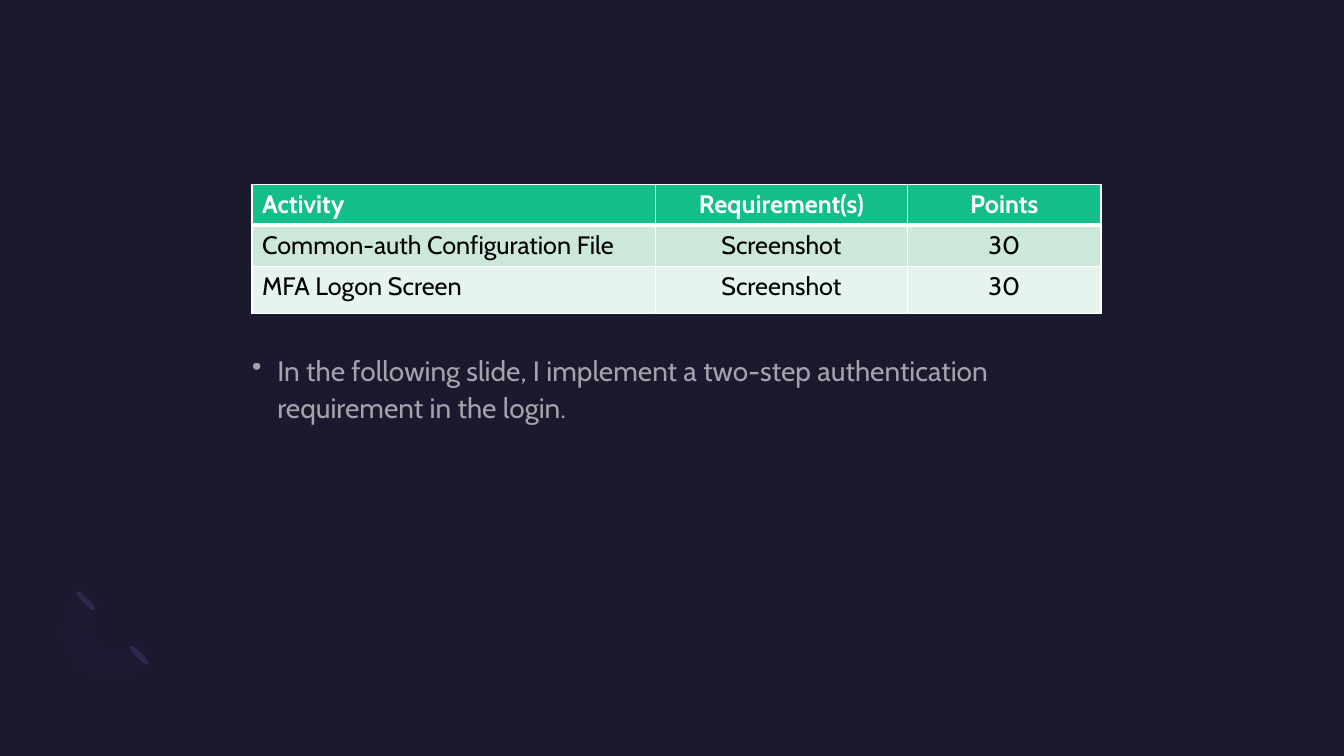
import pptx
import pptx.util
import pptx.dml.color
import pptx.enum.shapes
import pptx.enum.text
import pptx.oxml
import pptx.oxml.ns
from lxml import etree
from pptx.util import Inches

THEME = {
    "font": "Cabin", "table_size": 18, "body_size": 20,
    "background": "1B192E", "light": "FFFFFF", "dark": "000000",
    "header": "13BE89", "bands": ["CCE8DA", "E7F4ED"],
    "ellipse": "2C284A", "arc": "7771B2",
}
ROWS = [
    ("Activity", "Requirement(s)", "Points"),
    ("Common-auth Configuration File", "Screenshot", "30"),
    ("MFA Logon Screen", "Screenshot", "30"),
]
COLUMN_WIDTHS = [4, 2.5, 1.92]
ROW_HEIGHTS = [0.4, 0.4, 0.47]
LEFT, TABLE_TOP, BODY_TOP, BODY_HEIGHT = 2.5, 1.83, 3.47, 2.81
BODY = ("In the following slide, I implement a two-step authentication "
        "requirement in the login.")
ELLIPSES = [(1.35, 6.37), (0.82, 5.83)]
# Cubic curves of the ring: start, two control points, end
ARC_CURVES = [
    [(0.76, 6.59), (0.56, 6.39), (0.58, 6.05), (0.81, 5.82)],
    [(0.99, 6), (0.87, 6.11), (0.86, 6.29), (0.96, 6.38)],
    [(0.96, 6.38), (1.06, 6.48), (1.23, 6.47), (1.35, 6.36)],
    [(1.52, 6.54), (1.3, 6.76), (0.95, 6.79), (0.76, 6.59)],
]


def rgb(name):
    return pptx.dml.color.RGBColor.from_string(THEME.get(name, name))


def set_alpha(element, percent):
    color = element.find(".//" + pptx.oxml.ns.qn("a:srgbClr"))
    etree.SubElement(color, pptx.oxml.ns.qn("a:alpha")).set("val", str(percent * 1000))


def style_font(p, size, color, bold=False):
    p.font.name = THEME["font"]
    p.font.size = pptx.util.Pt(THEME[size])
    p.font.color.rgb = rgb(color)
    p.font.bold = bold


def style_shape(s, color):
    s.shadow.inherit = False
    s.fill.solid()
    s.fill.fore_color.rgb = rgb(color)
    s.line.fill.background()


def curve_points(curve, steps=12):
    for i in range(steps + 1):
        t = i / steps
        weights = ((1 - t) ** 3, 3 * t * (1 - t) ** 2, 3 * t ** 2 * (1 - t), t ** 3)
        yield tuple(Inches(sum(w * pt[axis] for w, pt in zip(weights, curve)))
                    for axis in (0, 1))


def set_borders(cell, bottom, top):
    tc_pr = cell._tc.get_or_add_tcPr()
    widths = {"lnL": 1, "lnR": 1, "lnT": top, "lnB": bottom}
    for i, (tag, width) in enumerate(widths.items()):
        tc_pr.insert(i, pptx.oxml.parse_xml(
            f'<a:{tag} {pptx.oxml.ns.nsdecls("a")} w="{pptx.util.Pt(width)}">'
            f'<a:solidFill><a:srgbClr val="{THEME["light"]}"/></a:solidFill></a:{tag}>'))


def add_decoration(slide):
    for left, top in ELLIPSES:
        s = slide.shapes.add_shape(pptx.enum.shapes.MSO_SHAPE.OVAL, Inches(left),
                                   Inches(top), Inches(0.06), Inches(0.26))
        s.rotation = 135
        style_shape(s, "ellipse")
    points = [pt for curve in ARC_CURVES for pt in curve_points(curve)]
    builder = slide.shapes.build_freeform(*points[0])
    builder.add_line_segments(points[1:], close=True)
    arc = builder.convert_to_shape()
    style_shape(arc, "arc")
    set_alpha(arc._element.spPr, 2)


def add_activity_table(slide):
    table = slide.shapes.add_table(
        len(ROWS), len(COLUMN_WIDTHS), Inches(LEFT), Inches(TABLE_TOP),
        Inches(sum(COLUMN_WIDTHS)), Inches(sum(ROW_HEIGHTS))).table
    table.first_row = table.horz_banding = False
    for column, width in zip(table.columns, COLUMN_WIDTHS):
        column.width = Inches(width)
    for i, (row, height) in enumerate(zip(table.rows, ROW_HEIGHTS)):
        row.height = Inches(height)
        header = i == 0
        for j, cell in enumerate(row.cells):
            cell.text = ROWS[i][j]
            p = cell.text_frame.paragraphs[0]
            if j:
                p.alignment = pptx.enum.text.PP_ALIGN.CENTER
            style_font(p, "table_size", "light" if header else "dark", header)
            cell.fill.solid()
            cell.fill.fore_color.rgb = rgb("header" if header else THEME["bands"][i - 1])
            set_borders(cell, bottom=3 if header else 1, top=3 if i == 1 else 1)


def add_body(slide):
    tf = slide.shapes.add_textbox(Inches(LEFT), Inches(BODY_TOP),
                                  Inches(sum(COLUMN_WIDTHS)), Inches(BODY_HEIGHT)).text_frame
    tf.word_wrap = True
    tf.margin_left = tf.margin_right = tf.margin_top = tf.margin_bottom = 0
    p = tf.paragraphs[0]
    r = p.add_run()
    r.text = BODY
    style_font(p, "body_size", "light")
    # Transparency is only drawn when the colour sits on the run
    r.font.color.rgb = rgb("light")
    set_alpha(r._r, 60)
    set_alpha(p._p.pPr, 60)
    p.line_spacing = 1.1
    p.space_before, p.space_after = pptx.util.Pt(10), pptx.util.Pt(8)
    p_pr = p._p.get_or_add_pPr()
    p_pr.set("marL", str(Inches(0.25)))
    p_pr.set("indent", str(Inches(-0.25)))
    bullet = pptx.oxml.parse_xml(f'<a:buChar {pptx.oxml.ns.nsdecls("a")} char="•"/>')
    p_pr.find(pptx.oxml.ns.qn("a:defRPr")).addprevious(bullet)


def main():
    prs = pptx.Presentation()
    prs.slide_width, prs.slide_height = Inches(13.33), Inches(7.5)
    slide = prs.slides.add_slide(prs.slide_layouts[6])
    slide.background.fill.solid()
    slide.background.fill.fore_color.rgb = rgb("background")
    add_decoration(slide)
    add_activity_table(slide)
    add_body(slide)
    prs.save("out.pptx")


if __name__ == "__main__":
    main()
